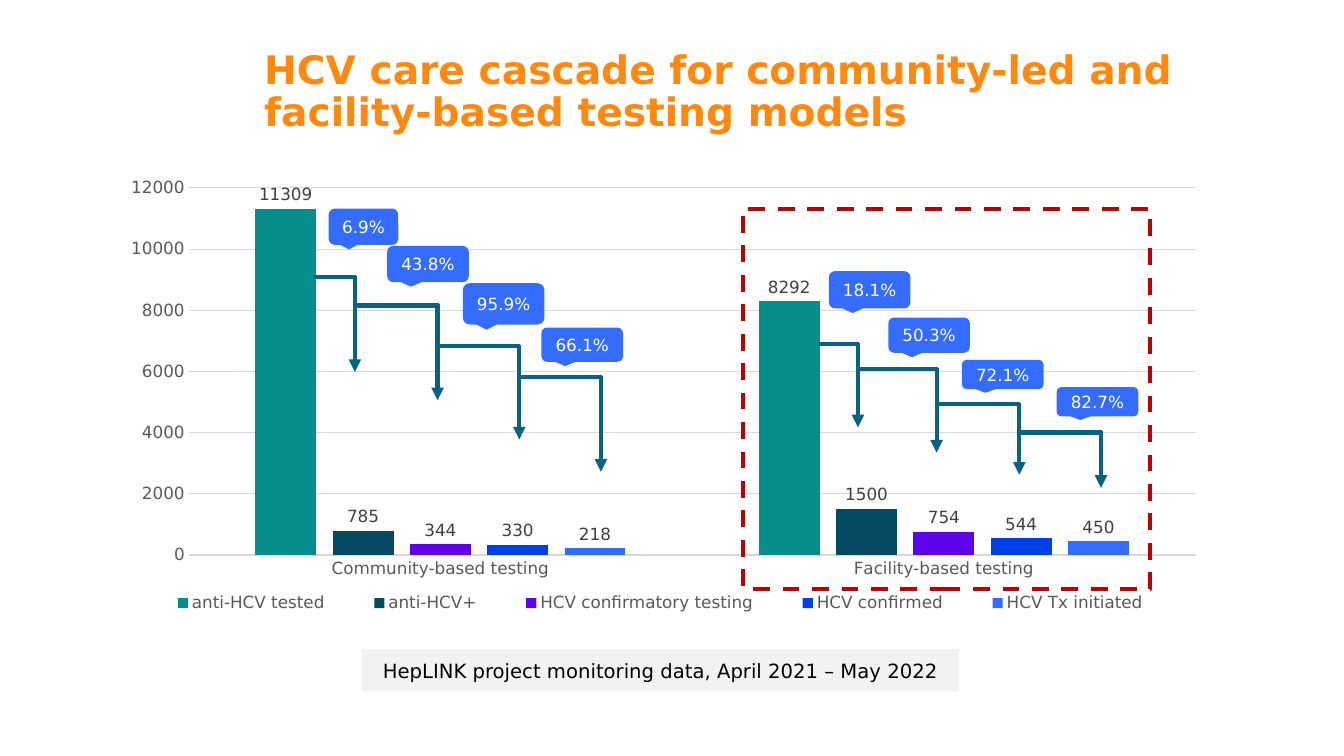
from typing import NamedTuple

from lxml import etree
from pptx import Presentation
from pptx.chart.data import CategoryChartData as ChartData
from pptx.dml.color import RGBColor as Rgb
from pptx.enum.chart import XL_CHART_TYPE as Kind
from pptx.enum.chart import XL_LABEL_POSITION as Spot
from pptx.enum.chart import XL_LEGEND_POSITION as Side
from pptx.enum.chart import XL_TICK_MARK as Tick
from pptx.enum.dml import MSO_LINE as Dash
from pptx.enum.shapes import MSO_CONNECTOR as Link
from pptx.enum.shapes import MSO_SHAPE as Form
from pptx.enum.text import MSO_ANCHOR as Anchor
from pptx.enum.text import PP_ALIGN as Align
from pptx.oxml import parse_xml
from pptx.oxml.ns import nsdecls, qn
from pptx.util import Inches, Pt

FACE = "DejaVu Sans"
HUES = {
    "title": "FF890E", "arrow": "076382", "tag": "346CFF", "white": "FFFFFF",
    "note": "F2F2F2", "black": "000000", "frame": "C00000",
    "grid": "D9D9D9", "axis": "595959", "label": "404040",
}


class Series(NamedTuple):
    name: str
    hue: str
    vals: tuple


class Step(NamedTuple):
    """An elbow that runs from left to right at top, then down to tip."""
    left: float
    top: float
    right: float
    tip: float


class Tag(NamedTuple):
    text: str
    left: float
    top: float
    width: float
    height: float


SERIES = [
    Series("anti-HCV tested", "068E8C", (11309, 8292)),
    Series("anti-HCV+", "054A62", (785, 1500)),
    Series("HCV confirmatory testing", "5F04E9", (344, 754)),
    Series("HCV confirmed", "0040E6", (330, 544)),
    Series("HCV Tx initiated", "346CFF", (218, 450)),
]
STEPS = [
    Step(3.1, 2.75, 3.52, 3.69), Step(3.52, 3.43, 4.34, 0),
]
STEPS = [
    # Community-based testing
    Step(3.10, 2.75, 3.52, 3.69),
    Step(3.52, 3.03, 4.34, 3.97),
    Step(4.34, 3.43, 5.15, 4.36),
    Step(5.15, 3.74, 5.96, 4.68),
    # Facility-based testing
    Step(8.12, 3.41, 8.51, 4.24),
    Step(8.51, 3.66, 9.29, 4.49),
    Step(9.29, 4.01, 10.11, 4.71),
    Step(10.11, 4.29, 10.92, 4.84),
]
TAGS = [
    Tag("6.9%", 3.26, 2.07, 0.69, 0.36),
    Tag("43.8%", 3.84, 2.44, 0.81, 0.36),
    Tag("95.9%", 4.59, 2.81, 0.81, 0.41),
    Tag("66.1%", 5.37, 3.25, 0.81, 0.34),
    Tag("18.1%", 8.22, 2.69, 0.81, 0.37),
    Tag("50.3%", 8.81, 3.15, 0.81, 0.35),
    Tag("72.1%", 9.54, 3.57, 0.81, 0.29),
    Tag("82.7%", 10.48, 3.84, 0.81, 0.29),
]


def rgb(key: str) -> Rgb:
    return Rgb.from_string(HUES.get(key, key))


def apply(item, vals: dict) -> None:
    for name, val in vals.items():
        setattr(item, name, val)


def style(font, hue: str, size: float = 12, bold: bool = False) -> None:
    apply(font, {"name": FACE, "size": Pt(size), "bold": bold})
    font.color.rgb = rgb(hue)


def paint(fill, hue: str) -> None:
    fill.solid()
    fill.fore_color.rgb = rgb(hue)


def stroke(line, hue: str, width: float) -> None:
    line.color.rgb = rgb(hue)
    line.width = Pt(width)


def place(item, left: float, top: float, width: float, height: float) -> None:
    apply(item, {"left": Inches(left), "top": Inches(top),
                 "width": Inches(width), "height": Inches(height)})


def add_box(slide, form, tag: Tag, fill: str, hue: str, size: float):
    box = slide.shapes.add_shape(form, *map(Inches, tag[1:]))
    box.shadow.inherit = False
    paint(box.fill, fill)
    box.line.fill.background()
    frame = box.text_frame
    apply(frame, {"text": tag.text, "word_wrap": True,
                  "vertical_anchor": Anchor.MIDDLE})
    para = frame.paragraphs[0]
    para.alignment = Align.CENTER
    style(para.runs[0].font, hue, size)
    return box


def add_line(slide, ends: tuple, arrow: bool) -> None:
    link = slide.shapes.add_connector(Link.STRAIGHT, *map(Inches, ends))
    stroke(link.line, "arrow", 3)
    if arrow:
        head = etree.SubElement(link.line._get_or_add_ln(), qn("a:tailEnd"))
        head.set("type", "triangle")
    etree.SubElement(link._element.spPr, qn("a:effectLst"))


def add_step(slide, step: Step) -> None:
    edge = 0.01
    add_line(slide, (step.left, step.top, step.right + edge, step.top), False)
    add_line(slide, (step.right, step.top - edge, step.right, step.tip), True)


def layout(left: float, top: float, width: float, height: float,
           inner: bool = False):
    target = '<c:layoutTarget val="inner"/>' if inner else ""
    sizes = {"x": left, "y": top, "w": width, "h": height}
    return parse_xml(
        f'<c:layout {nsdecls("c")}><c:manualLayout>{target}'
        '<c:xMode val="edge"/><c:yMode val="edge"/>'
        + "".join(f'<c:{key} val="{val}"/>' for key, val in sizes.items())
        + "</c:manualLayout></c:layout>")


def set_layout(part, index: int, item) -> None:
    for old in part.findall(qn("c:layout")):
        part.remove(old)
    part.insert(index, item)


def add_bars(slide) -> None:
    data = ChartData()
    data.categories = ["Community-based testing", "Facility-based testing"]
    for row in SERIES:
        data.add_series(row.name, row.vals)
    area = map(Inches, (1.11, 1.75, 10.88, 4.41))
    chart = slide.shapes.add_chart(Kind.COLUMN_CLUSTERED, *area, data).chart
    apply(chart, {"has_title": False, "has_legend": True})
    style(chart.font, "black")

    # Bars and their values
    plot = chart.plots[0]
    apply(plot, {"gap_width": 219, "overlap": -27, "vary_by_categories": False})
    for row, bars in zip(SERIES, plot.series):
        paint(bars.format.fill, row.hue)
        labels = bars.data_labels
        apply(labels, {"show_value": True, "position": Spot.OUTSIDE_END})
        style(labels.font, "label")

    # Axes
    cats, vals = chart.category_axis, chart.value_axis
    for axis in (cats, vals):
        apply(axis, {"major_tick_mark": Tick.NONE, "minor_tick_mark": Tick.NONE})
        style(axis.tick_labels.font, "axis")
    stroke(cats.format.line, "grid", 0.75)
    apply(vals, {"minimum_scale": 0, "maximum_scale": 12000,
                 "major_unit": 2000, "has_major_gridlines": True})
    vals.format.line.fill.background()
    stroke(vals.major_gridlines.format.line, "grid", 0.75)

    # Legend in one row below the plot
    key = chart.legend
    apply(key, {"position": Side.RIGHT, "include_in_layout": False})
    style(key.font, "axis")
    set_layout(key._element, 1, layout(0.02, 0.92, 0.96, 0.08))
    zone = chart._chartSpace.chart.plotArea
    set_layout(zone, 0, layout(0.07, 0.026, 0.918, 0.826, True))


def add_title(slide) -> None:
    title = slide.shapes.title
    place(title, 2.62, 0.25, 10.55, 1.34)
    frame = title.text_frame
    frame.text = ("HCV care cascade for community-led and "
                  "facility-based testing models")
    apply(frame, {"word_wrap": True, "vertical_anchor": Anchor.MIDDLE,
                  "margin_left": 0, "margin_right": 0,
                  "margin_top": 0, "margin_bottom": 0})
    para = frame.paragraphs[0]
    apply(para, {"alignment": Align.LEFT, "line_spacing": 0.9})
    style(para.runs[0].font, "title", 28, True)


def main() -> None:
    deck = Presentation()
    apply(deck, {"slide_width": Inches(13.33), "slide_height": Inches(7.5)})
    slide = deck.slides.add_slide(deck.slide_layouts[5])
    add_title(slide)
    add_bars(slide)
    for step in STEPS:
        add_step(slide, step)
    for tag in TAGS:
        add_box(slide, Form.ROUNDED_RECTANGULAR_CALLOUT, tag, "tag", "white", 12)
    note = Tag("HepLINK project monitoring data, April 2021 – May 2022",
               3.59, 6.44, 5.92, 0.42)
    add_box(slide, Form.RECTANGLE, note, "note", "black", 14)

    # Dashed frame round the facility bars
    frame = slide.shapes.add_shape(
        Form.RECTANGLE, *map(Inches, (7.37, 2.07, 4.04, 3.77)))
    frame.shadow.inherit = False
    frame.fill.background()
    stroke(frame.line, "frame", 3)
    frame.line.dash_style = Dash.DASH
    deck.save("out.pptx")


if __name__ == "__main__":
    main()
